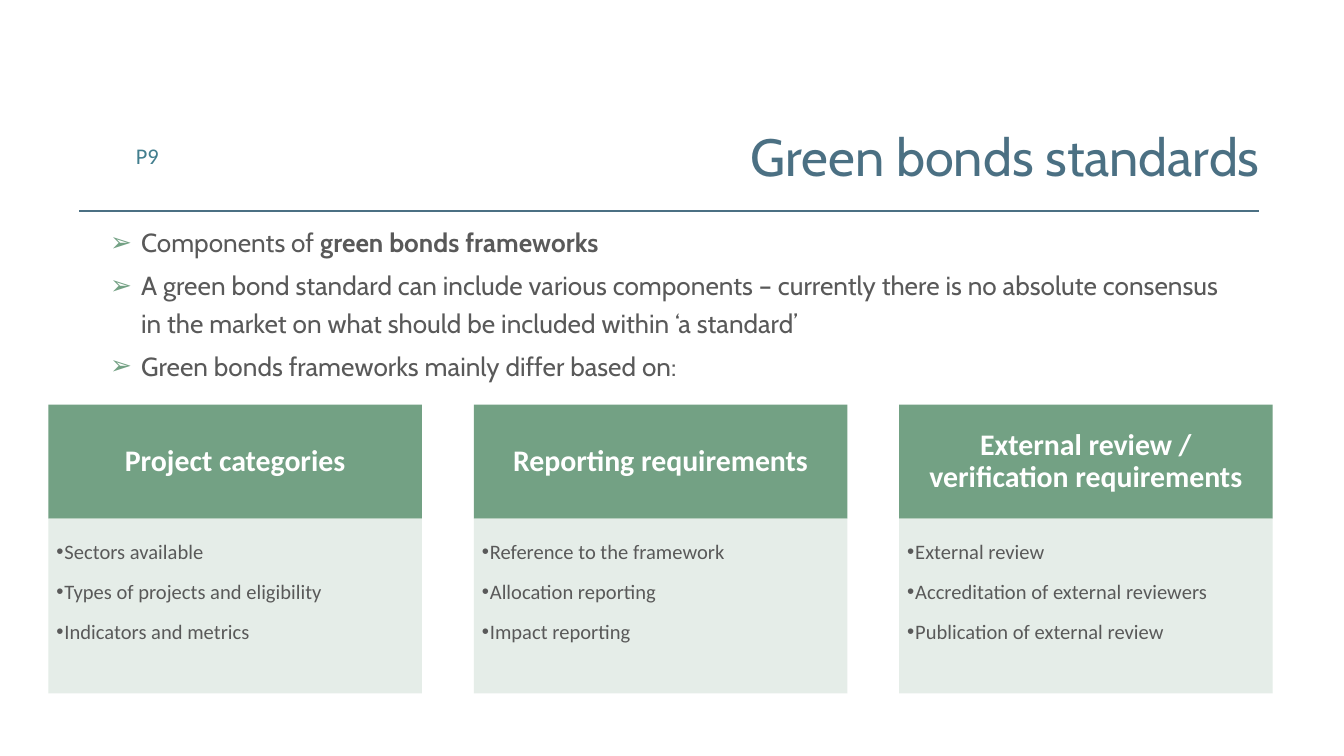
"""Build the slide on green bonds standards."""
from lxml import etree
from pptx import Presentation
from pptx.dml.color import RGBColor
from pptx.enum.shapes import MSO_CONNECTOR, MSO_SHAPE
from pptx.enum.text import MSO_ANCHOR, PP_ALIGN
from pptx.oxml.ns import qn
from pptx.util import Inches, Pt

LINE = MSO_CONNECTOR.STRAIGHT
RECT = MSO_SHAPE.RECTANGLE
TOP, MID, LOW = MSO_ANCHOR.TOP, MSO_ANCHOR.MIDDLE, MSO_ANCHOR.BOTTOM
LEFT, MIDDLE, RIGHT = PP_ALIGN.LEFT, PP_ALIGN.CENTER, PP_ALIGN.RIGHT
BLUE, TEAL, GREEN, PALE = "4B7083", "427E8E", "73A184", "E3ECE6"
GREY, WHITE = "595959", "FFFFFF"


def color(code):
    return RGBColor.from_string(code)


def write(shape, paras, font, size, ink, align=LEFT, anchor=TOP, inset=(0, 0, 0, 0),
          lines=1.0, before=0, after=0, mark=None, tint=None, indent=0):
    frame = shape.text_frame
    frame.word_wrap = True
    frame.vertical_anchor = anchor
    frame.margin_left, frame.margin_top, frame.margin_right, frame.margin_bottom = map(Inches, inset)
    for i, runs in enumerate(paras):
        para = frame.add_paragraph() if i else frame.paragraphs[0]
        para.alignment = align
        para.line_spacing = lines
        para.space_before = Pt(before if i else 0)
        para.space_after = Pt(after)
        if mark:
            para.level = 1
            props = para._p.get_or_add_pPr()
            props.set("marL", str(Inches(indent[0])))
            props.set("indent", str(Inches(indent[1])))
            hue = etree.SubElement(props, qn("a:buClr"))
            etree.SubElement(hue, qn("a:srgbClr"), val=tint)
            etree.SubElement(props, qn("a:buFont"), typeface="Arial")
            etree.SubElement(props, qn("a:buChar"), char=mark)
        for text, bold in runs:
            run = para.add_run()
            run.text = text
            run.font.name = font
            run.font.size = Pt(size)
            run.font.bold = bold
            run.font.color.rgb = color(ink)


deck = Presentation()
deck.slide_width = Inches(10)
deck.slide_height = deck.slide_width * 9 // 16
slide = deck.slides.add_slide(deck.slide_layouts[6])
shapes = slide.shapes

rule = shapes.add_connector(LINE, Inches(0.59), Inches(1.57), Inches(9.37), Inches(1.57))
rule.line.color.rgb = color(BLUE)
rule.line.width = Pt(1)
etree.SubElement(rule._element.spPr, qn("a:effectLst"))

page = shapes.add_textbox(Inches(0.69), Inches(1.06), Inches(0.49), Inches(0.22))
write(page, [[("P9", False)]], "Calibri", 12, TEAL, RIGHT)

title = shapes.add_textbox(Inches(1.68), Inches(0.92), Inches(7.69), Inches(0.47))
write(title, [[("Green bonds standards", False)]], "Cabin", 28, BLUE, RIGHT, LOW)

points = [
    [("Components of ", False), ("green bonds frameworks", True)],
    [("A green bond standard can include various components – currently there is no "
      "absolute consensus in the market on what should be included within ‘a standard’", False)],
    [("Green bonds frameworks mainly differ based on:", False)],
]
body = shapes.add_textbox(Inches(0.44), Inches(1.64), Inches(8.78), Inches(3.22))
write(body, points, "Cabin", 14, GREY, lines=1.2, before=2.8,
      mark="➢", tint=GREEN, indent=(0.61, -0.23))

cards = [
    ("Project categories",
     ["Sectors available", "Types of projects and eligibility", "Indicators and metrics"]),
    ("Reporting requirements",
     ["Reference to the framework", "Allocation reporting", "Impact reporting"]),
    ("External review / verification requirements",
     ["External review", "Accreditation of external reviewers", "Publication of external review"]),
]
for col, (name, items) in enumerate(cards):
    left = Inches(0.36 + col * 6.33 / 2)
    head = shapes.add_shape(RECT, left, Inches(3.01), Inches(2.78), Inches(0.85))
    panel = shapes.add_shape(RECT, left, Inches(3.86), Inches(2.78), Inches(1.3))
    for box, fill in ((head, GREEN), (panel, PALE)):
        box.shadow.inherit = False
        box.fill.solid()
        box.fill.fore_color.rgb = color(fill)
        box.line.fill.background()
    shade = panel._element.spPr.find(qn("a:solidFill")).find(qn("a:srgbClr"))
    etree.SubElement(shade, qn("a:alpha"), val="90000")
    write(head, [[(name, True)]], "Calibri", 16, WHITE, MIDDLE, MID,
          (0.12, 0.07, 0.12, 0.07), lines=0.9)
    write(panel, [[(item, False)] for item in items], "Calibri", 11, GREY,
          inset=(0.06, 0.06, 0.09, 0.1), lines=1.5, after=1.65,
          mark="•", tint=GREY, indent=(0.06, -0.06))

deck.save("out.pptx")
